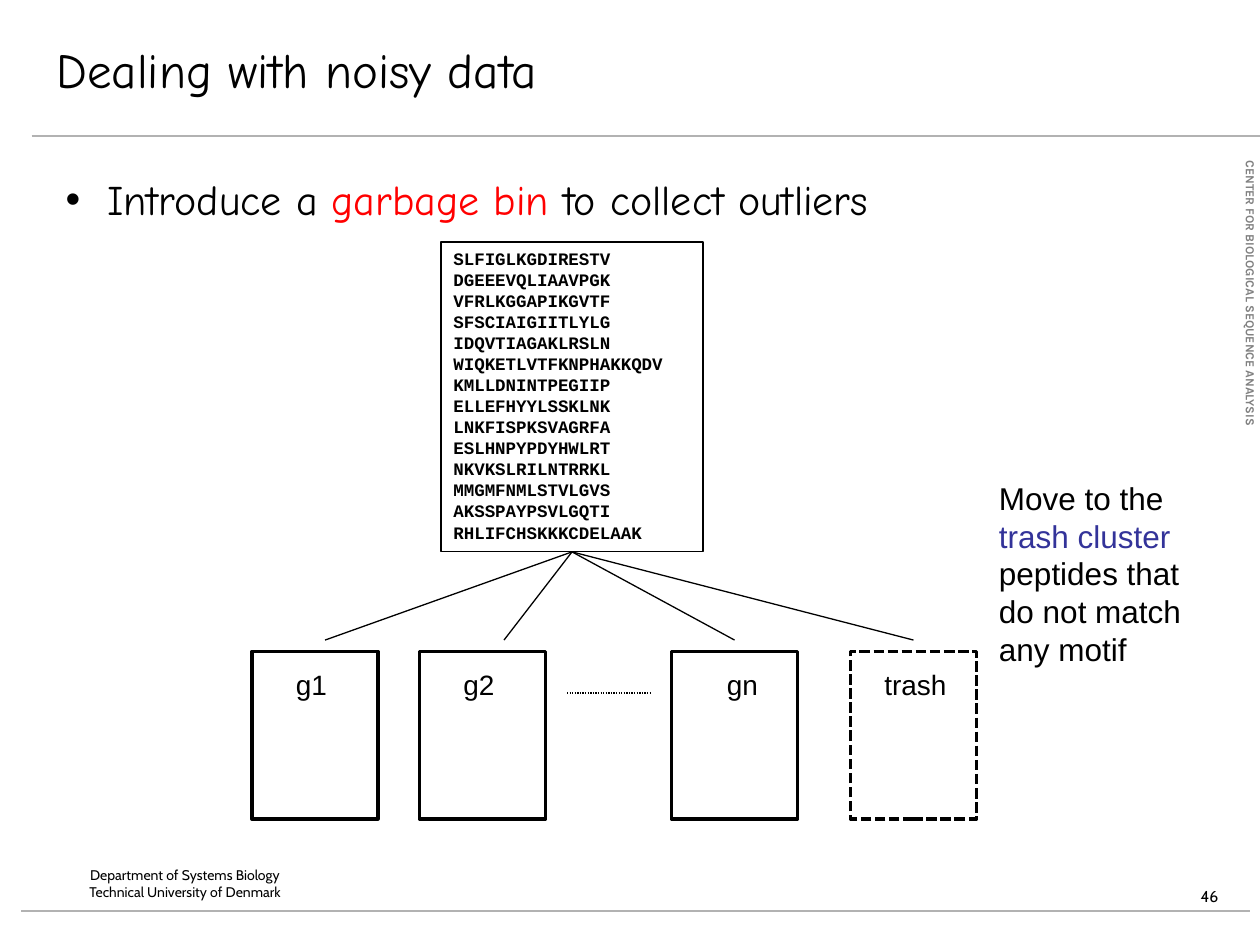
import pptx
import pptx.util
import pptx.dml.color
import pptx.enum.dml
import pptx.enum.shapes
import pptx.enum.text
import pptx.oxml.xmlchemy

Inches = pptx.util.Inches
Pt = pptx.util.Pt
Anchor = pptx.enum.text.MSO_ANCHOR
Align = pptx.enum.text.PP_ALIGN
Dash = pptx.enum.dml.MSO_LINE
new_element = pptx.oxml.xmlchemy.OxmlElement

THEME = {
    "colors": {"ink": "000000", "rule": "B2B2B2", "side": "808080",
               "garbage": "FF0000", "cluster": "333399"},
    "fonts": {
        "title": {"name": "Comic Neue", "size": Pt(28), "bold": False},
        "body": {"name": "Comic Neue", "size": Pt(24)},
        "peptide": {"name": "Courier New", "size": Pt(10), "bold": True},
        "label": {"name": "Arial", "size": Pt(16)},
        "note": {"name": "Arial", "size": Pt(18)},
        "side": {"name": "Karla", "size": Pt(7), "bold": True},
        "footer": {"name": "Cabin", "size": Pt(8)},
        "number": {"name": "Cabin", "size": Pt(9)},
    },
    "lines": {"rule": 1.5, "thin": 0.75, "cluster": 2},
}

TITLE = "Dealing with noisy data"
BULLET = [("Introduce a ", "ink"), ("garbage bin ", "garbage"), ("to collect outliers", "ink")]
NOTE = [("Move to the ", "ink"), ("trash cluster ", "cluster"),
        ("peptides that do not match any motif", "ink")]
SIDE = "CENTER FOR BIOLOGICAL SEQUENCE ANALYSIS"
FOOTER = ["Department of Systems Biology", "Technical University of Denmark"]
PAGE = "46"
PEPTIDES = [
    "SLFIGLKGDIRESTV", "DGEEEVQLIAAVPGK", "VFRLKGGAPIKGVTF", "SFSCIAIGIITLYLG",
    "IDQVTIAGAKLRSLN", "WIQKETLVTFKNPHAKKQDV", "KMLLDNINTPEGIIP", "ELLEFHYYLSSKLNK",
    "LNKFISPKSVAGRFA", "ESLHNPYPDYHWLRT", "NKVKSLRILNTRRKL", "MMGMFNMLSTVLGVS",
    "AKSSPAYPSVLGQTI", "RHLIFCHSKKKCDELAAK",
]
CLUSTERS = [
    {"name": "g1", "left": 2, "label": (2.25, 0.45), "branch": 2.58, "dash": None},
    {"name": "g2", "left": 3.33, "label": (3.58, 0.45), "branch": 4, "dash": None},
    {"name": "gn", "left": 5.33, "label": (5.67, 0.45), "branch": 5.83, "dash": None},
    {"name": "trash", "left": 6.75, "label": (6.92, 0.7), "branch": 7.25,
     "dash": Dash.SQUARE_DOT},
]
CLUSTER_TOP, CLUSTER_WIDTH, CLUSTER_HEIGHT = 5.17, 1, 1.33
LABEL_TOP, LABEL_HEIGHT = 5.25, 0.37
BRANCH_END = 5.08
RULES = [(0.25, 1.08), (0.17, 7.23)]
RULE_LENGTH = 9.75


def color(name):
    return pptx.dml.color.RGBColor.from_string(THEME["colors"][name])


def apply(target, values):
    for name, value in values.items():
        setattr(target, name, value)


def place(shape, left, top, width, height):
    apply(shape, {"left": Inches(left), "top": Inches(top),
                  "width": Inches(width), "height": Inches(height)})


def write(shape, paragraphs, font, wrap=True, align=Align.LEFT, insets=(0.1, 0.05)):
    frame = shape.text_frame
    across, down = map(Inches, insets)
    apply(frame, {"word_wrap": wrap, "auto_size": pptx.enum.text.MSO_AUTO_SIZE.NONE,
                  "vertical_anchor": Anchor.TOP,
                  "margin_left": across, "margin_right": across,
                  "margin_top": down, "margin_bottom": down})
    for index, runs in enumerate(paragraphs):
        paragraph = frame.add_paragraph() if index else frame.paragraphs[0]
        apply(paragraph, {"alignment": align, "space_before": Pt(0)})
        for text, color_name in runs:
            run = paragraph.add_run()
            run.text = text
            apply(run.font, THEME["fonts"][font])
            run.font.color.rgb = color(color_name)


def add_text(slide, box, paragraphs, font, **layout):
    shape = slide.shapes.add_textbox(*map(Inches, box))
    write(shape, paragraphs, font, **layout)
    return shape


def style_line(line, color_name, width, dash=None):
    line.color.rgb = color(color_name)
    line.width = Pt(THEME["lines"][width])
    if dash is not None:
        line.dash_style = dash


def add_box(slide, box, width, dash=None):
    shape = slide.shapes.add_shape(pptx.enum.shapes.MSO_SHAPE.RECTANGLE, *map(Inches, box))
    shape.shadow.inherit = False
    shape.fill.background()
    style_line(shape.line, "ink", width, dash)
    return shape


def add_line(slide, start, end, color_name, width, dash=None):
    connector = slide.shapes.add_connector(
        pptx.enum.shapes.MSO_CONNECTOR.STRAIGHT, *map(Inches, (*start, *end)))
    style_line(connector.line, color_name, width, dash)
    connector._element.spPr.append(new_element("a:effectLst"))
    return connector


def add_bullet(paragraph):
    properties = paragraph._p.get_or_add_pPr()
    properties.set("marL", str(Inches(0.33)))
    properties.set("indent", str(-Inches(0.33)))
    for tag, name, value in [("a:buFont", "typeface", "Arial"), ("a:buChar", "char", "•")]:
        element = new_element(tag)
        element.set(name, value)
        properties.append(element)


def main():
    presentation = pptx.Presentation()
    apply(presentation, {"slide_width": Inches(10), "slide_height": Inches(7.5)})
    slide = presentation.slides.add_slide(presentation.slide_layouts[1])

    for left, top in RULES:
        add_line(slide, (left, top), (left + RULE_LENGTH, top), "rule", "rule")
    side = add_text(slide, (8.38, 2.72, 3.09, 0.14), [[(SIDE, "side")]], "side",
                    insets=(0.03, 0.01))
    side.rotation = 90
    add_text(slide, (0.42, 6.83, 2.1, 0.5), [[(line, "ink")] for line in FOOTER],
             "footer", align=Align.CENTER)
    add_text(slide, (9.43, 6.99, 0.39, 0.25), [[(PAGE, "ink")]], "number", wrap=False)

    title, body = slide.placeholders
    place(title, 0.35, 0.26, 4.41, 0.57)
    write(title, [[(TITLE, "ink")]], "title", wrap=False)
    place(body, 0.42, 1.33, 8.5, 0.51)
    write(body, [BULLET], "body")
    add_bullet(body.text_frame.paragraphs[0])

    peptides = add_box(slide, (3.5, 1.92, 2.08, 2.46), "thin")
    write(peptides, [[(peptide, "ink")] for peptide in PEPTIDES], "peptide")

    for cluster in CLUSTERS:
        add_box(slide, (cluster["left"], CLUSTER_TOP, CLUSTER_WIDTH, CLUSTER_HEIGHT),
                "cluster", cluster["dash"])
        label_left, label_width = cluster["label"]
        add_text(slide, (label_left, LABEL_TOP, label_width, LABEL_HEIGHT),
                 [[(cluster["name"], "ink")]], "label", wrap=False)
        branch = add_line(slide, (4.54, 4.38), (cluster["branch"], BRANCH_END), "ink", "thin")
        branch.begin_connect(peptides, 2)
    add_line(slide, (4.5, 5.5), (5.17, 5.5), "ink", "thin", Dash.ROUND_DOT)

    add_text(slide, (7.83, 3.75, 1.92, 1.62), [NOTE], "note")
    presentation.save("out.pptx")


if __name__ == "__main__":
    main()
